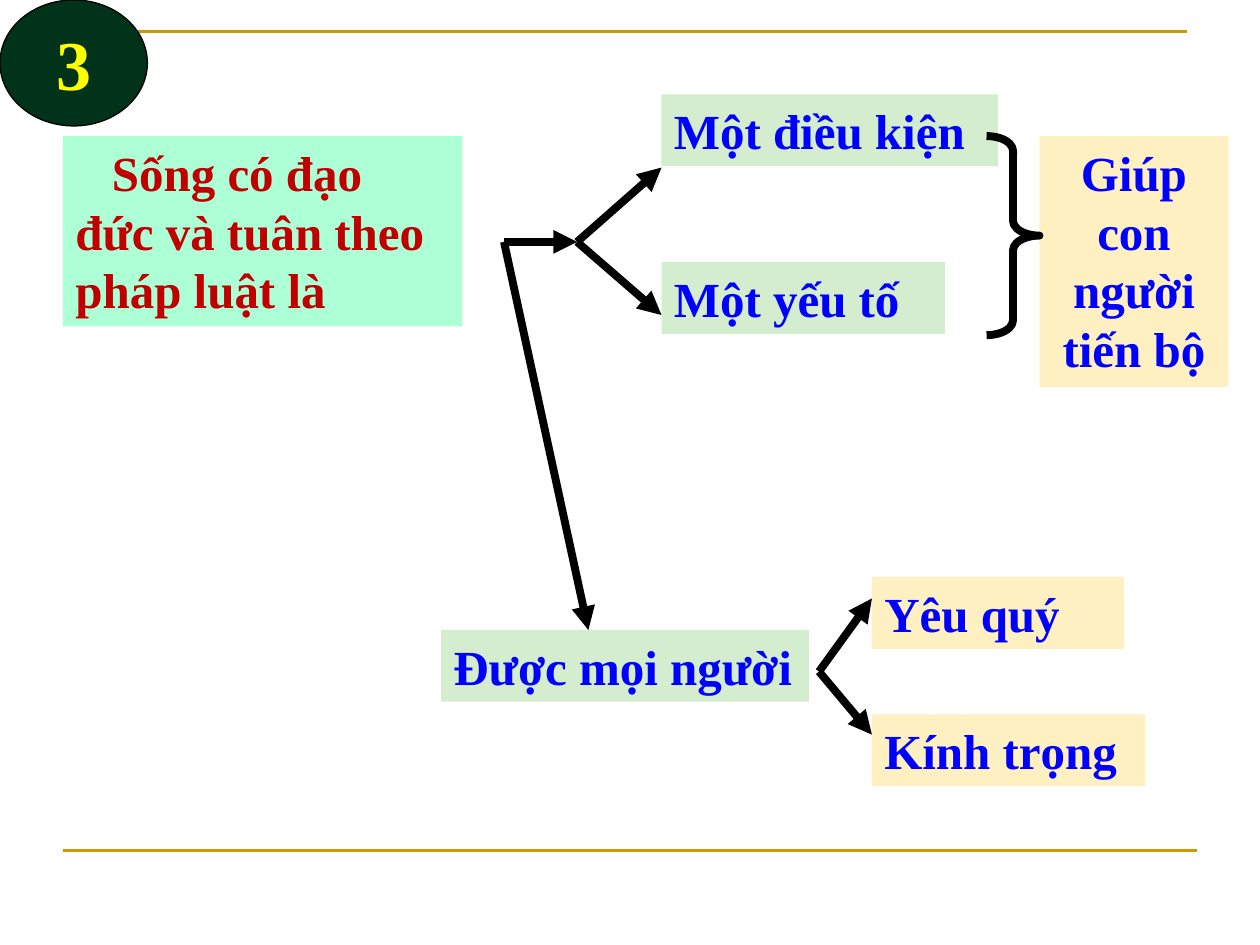
from pptx import Presentation
from pptx.dml.color import RGBColor
from pptx.enum import shapes, text
from pptx.oxml import xmlchemy
from pptx.oxml.ns import qn
from pptx.util import Inches, Pt

FONT = "Times New Roman"
GOLD = RGBColor(0xCC, 0x99, 0x00)
BLACK = RGBColor(0x00, 0x00, 0x00)
BLUE = RGBColor(0x00, 0x00, 0xFF)
RED = RGBColor(0xC0, 0x00, 0x00)
YELLOW = RGBColor(0xFF, 0xFF, 0x00)
MINT = RGBColor(0xAD, 0xFF, 0xD6)
GREEN = RGBColor(0xD3, 0xED, 0xCE)
CREAM = RGBColor(0xFF, 0xF0, 0xC2)
DARK_GREEN = RGBColor(0x00, 0x33, 0x1A)

LABELS = [
    ("Một điều kiện", 5.25, 0.75, 2.67, 0.57, GREEN),
    ("Một yếu tố", 5.25, 2.08, 2.25, 0.57, GREEN),
    ("Được mọi người", 3.5, 5, 2.92, 0.57, GREEN),
    ("Yêu quý", 6.92, 4.58, 2, 0.57, CREAM),
    ("Kính trọng", 6.92, 5.67, 2.17, 0.57, CREAM),
]
START = (4, 1.92)
FORK = (4.58, 1.92)
PEOPLE_FORK = (6.5, 5.33)
ARROWS = [
    (START, FORK),
    (FORK, (5.25, 1.33)),
    (FORK, (5.25, 2.5)),
    (START, (4.67, 5)),
    (PEOPLE_FORK, (6.92, 4.75)),
    (PEOPLE_FORK, (6.92, 5.83)),
]


def style_line(shape, color, width):
    shape.line.color.rgb = color
    shape.line.width = Pt(width)


def write_text(shape, words, color, size, align):
    shape.text_frame.text = words
    para = shape.text_frame.paragraphs[0]
    para.alignment = align
    font = para.runs[0].font
    font.name, font.size, font.bold = FONT, Pt(size), True
    font.color.rgb = color
    return para


def add_label(page, words, left, top, width, height, fill, color=BLUE,
              align=text.PP_ALIGN.LEFT):
    box = page.shapes.add_textbox(Inches(left), Inches(top), Inches(width), Inches(height))
    box.fill.solid()
    box.fill.fore_color.rgb = fill
    box.text_frame.word_wrap = True
    return write_text(box, words, color, 28, align)


def add_line(page, start, end, color, width):
    line = page.shapes.add_connector(
        shapes.MSO_CONNECTOR.STRAIGHT, *map(Inches, start + end))
    style_line(line, color, width)
    xmlchemy.OxmlElement
    line._element.spPr.append(xmlchemy.OxmlElement("a:effectLst"))
    return line


def add_arrow(page, start, end):
    arrow = add_line(page, start, end, BLACK, 4.5)
    head = xmlchemy.OxmlElement("a:tailEnd")
    head.set("type", "triangle")
    arrow._element.spPr.find(qn("a:ln")).append(head)


def add_corner(page):
    builder = page.shapes.build_freeform(Inches(0.42), Inches(0.92))
    builder.add_line_segments(
        [(Inches(0.42), Inches(0.25)), (Inches(9.42), Inches(0.25))], close=False)
    corner = builder.convert_to_shape()
    corner.shadow.inherit = False
    corner.fill.background()
    style_line(corner, GOLD, 1.5)


def add_brace(page):
    brace = page.shapes.add_shape(
        shapes.MSO_SHAPE.RIGHT_BRACE, Inches(7.83), Inches(1.08), Inches(0.42), Inches(1.58))
    brace.shadow.inherit = False
    brace.adjustments[0] = 0.28
    brace.fill.background()
    style_line(brace, BLACK, 4.5)


def add_badge(page, number):
    badge = page.shapes.add_shape(
        shapes.MSO_SHAPE.OVAL, 0, 0, Inches(1.17), Inches(1))
    badge.shadow.inherit = False
    badge.fill.solid()
    badge.fill.fore_color.rgb = DARK_GREEN
    style_line(badge, BLACK, 0.75)
    badge.text_frame.word_wrap = False
    badge.text_frame.vertical_anchor = text.MSO_ANCHOR.MIDDLE
    write_text(badge, number, YELLOW, 40, text.PP_ALIGN.CENTER)


def main():
    deck = Presentation()
    deck.slide_width, deck.slide_height = Inches(10), Inches(7.5)
    page = deck.slides.add_slide(deck.slide_layouts[6])
    add_corner(page)
    add_line(page, (0.5, 6.75), (9.5, 6.75), GOLD, 1.5)
    topic = add_label(page, "Sống có đạo đức và tuân theo pháp luật là",
                      0.5, 1.08, 3.17, 1.51, MINT, RED)
    topic._p.get_or_add_pPr().set("indent", str(Inches(0.29)))
    for label in LABELS:
        add_label(page, *label)
    add_label(page, "Giúp con người tiến bộ", 8.25, 1.08, 1.5, 1.99, CREAM,
              align=text.PP_ALIGN.CENTER)
    add_brace(page)
    for start, end in ARROWS:
        add_arrow(page, start, end)
    add_badge(page, "3")
    deck.save("out.pptx")


if __name__ == "__main__":
    main()
